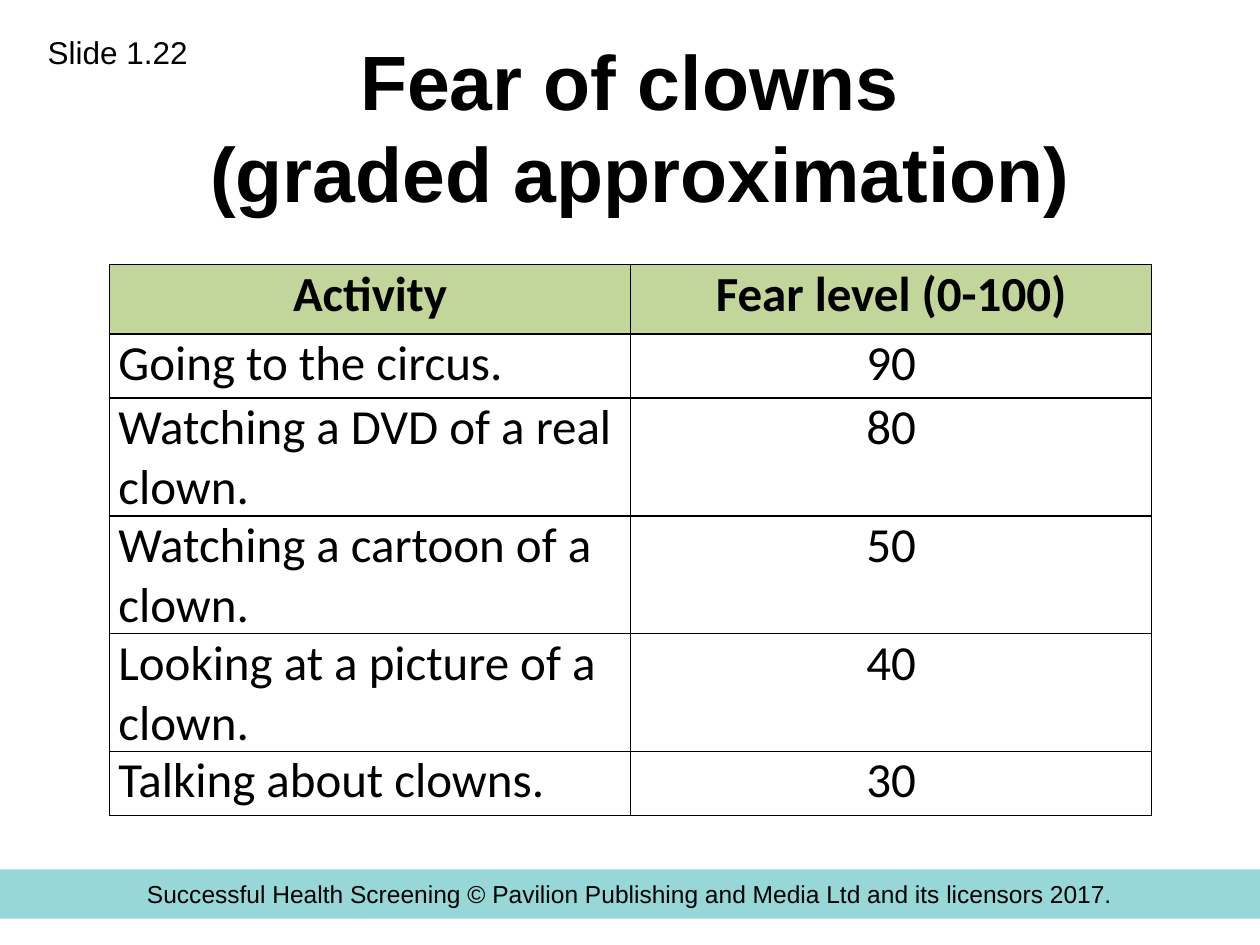
from pptx import Presentation
from pptx.dml.color import RGBColor
from pptx.enum.shapes import MSO_SHAPE
from pptx.enum.text import MSO_ANCHOR, PP_ALIGN
from pptx.oxml.ns import qn
from pptx.util import Inches, Pt
from lxml import etree

LEFT, MID = PP_ALIGN.LEFT, PP_ALIGN.CENTER
TOP, CENTRE = MSO_ANCHOR.TOP, MSO_ANCHOR.MIDDLE
RECT = MSO_SHAPE.RECTANGLE
BLACK = RGBColor(0x00, 0x00, 0x00)
TEAL = RGBColor(0x97, 0xD7, 0xD7)
GREEN = RGBColor(0xC2, 0xD6, 0x9B)
WIDTH, HEIGHT = 10, 7.5

ROWS = [
    ("Activity", "Fear level (0-100)"),
    ("Going to the circus.", "90"),
    ("Watching a DVD of a real clown.", "80"),
    ("Watching a cartoon of a clown.", "50"),
    ("Looking at a picture of a clown.", "40"),
    ("Talking about clowns.", "30"),
]


def style(frame, size, face, align, bold=False):
    for para in frame.paragraphs:
        para.alignment = align
        for run in para.runs:
            font = run.font
            font.size, font.name, font.bold = Pt(size), face, bold
            font.color.rgb = BLACK


def add_text(slide, box, text, size, align=MID, anchor=CENTRE, bold=False):
    label = slide.shapes.add_textbox(*map(Inches, box))
    frame = label.text_frame
    frame.word_wrap = True
    frame.vertical_anchor = anchor
    frame.text = text
    style(frame, size, "Arial", align, bold)


def add_footer(slide, box):
    band = slide.shapes.add_shape(RECT, *map(Inches, box))
    band.shadow.inherit = False
    band.fill.solid()
    band.fill.fore_color.rgb = TEAL
    band.line.fill.background()
    add_text(slide, box, "Successful Health Screening © Pavilion Publishing "
             "and Media Ltd and its licensors 2017.", 14)


def add_border(cell):
    props = cell._tc.get_or_add_tcPr()
    for place, side in enumerate(("lnL", "lnR", "lnT", "lnB")):
        line = etree.Element(qn("a:" + side), w=str(Pt(1)))
        fill = etree.SubElement(line, qn("a:solidFill"))
        etree.SubElement(fill, qn("a:srgbClr"), val=str(BLACK))
        props.insert(place, line)  # borders come before the fill


def add_grid(slide, box, head=0.55, row=0.51):
    grid = slide.shapes.add_table(len(ROWS), 2, *map(Inches, box)).table
    for col in grid.columns:
        col.width = Inches(box[2] / 2)
    for r, texts in enumerate(ROWS):
        grid.rows[r].height = Inches(row if r else head)
        for c, text in enumerate(texts):
            cell = grid.cell(r, c)
            cell.margin_left = cell.margin_right = Inches(0.07)
            cell.margin_top = cell.margin_bottom = 0
            cell.text_frame.text = text
            style(cell.text_frame, 28, "Calibri",
                  LEFT if r and not c else MID, r == 0)
            if r:
                cell.fill.background()
            else:
                cell.fill.solid()
                cell.fill.fore_color.rgb = GREEN
            add_border(cell)


def main():
    deck = Presentation()
    deck.slide_width, deck.slide_height = Inches(WIDTH), Inches(HEIGHT)
    slide = deck.slides.add_slide(deck.slide_layouts[6])

    # Footer band, title, table of fears, slide number
    add_footer(slide, (0, 0.92 * HEIGHT, WIDTH, 0.39))
    add_text(slide, (0.05 * WIDTH, 0.37, 0.9 * WIDTH, 1.25),
             "Fear of clowns\v (graded approximation)", 44, bold=True)
    add_grid(slide, (0.87, 0.28 * HEIGHT, 8.27, 3.1))
    add_text(slide, (0.28, 0.21, 1.42, 0.4), "Slide 1.22", 18, LEFT, TOP)

    deck.save("out.pptx")


if __name__ == "__main__":
    main()
